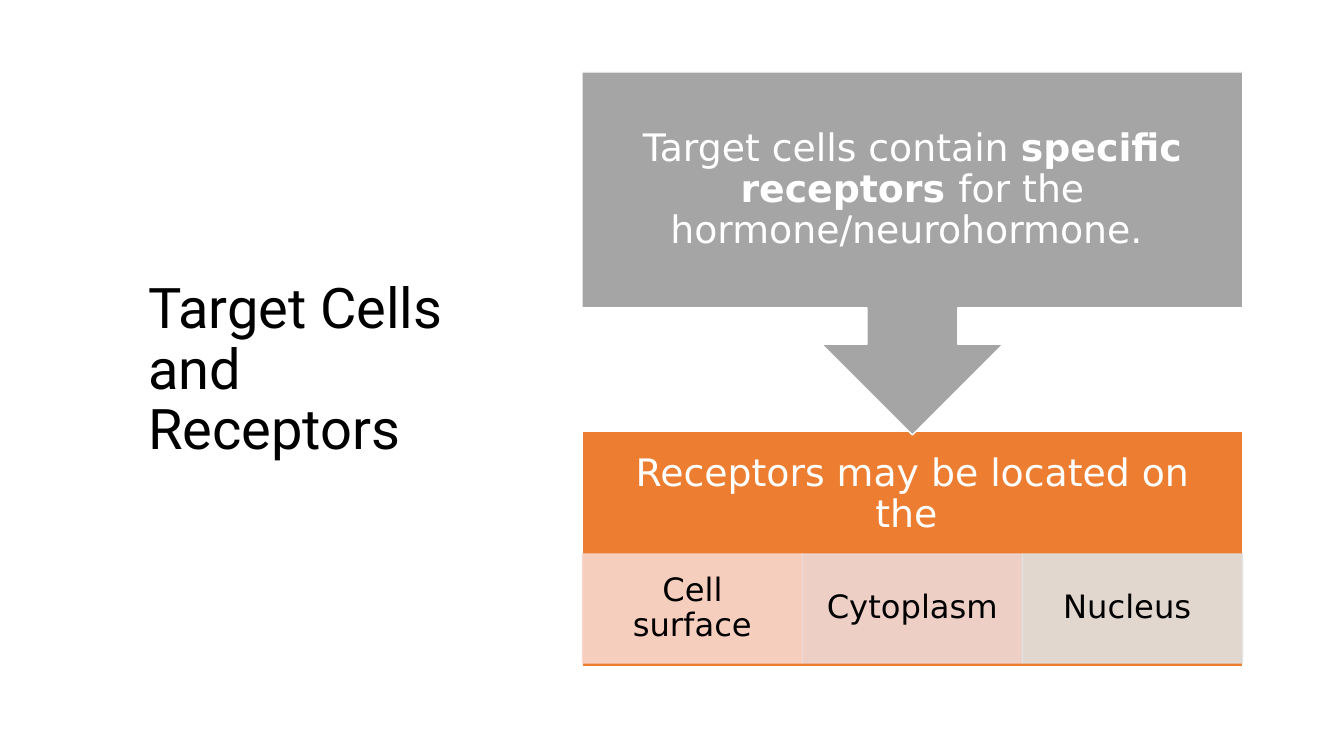
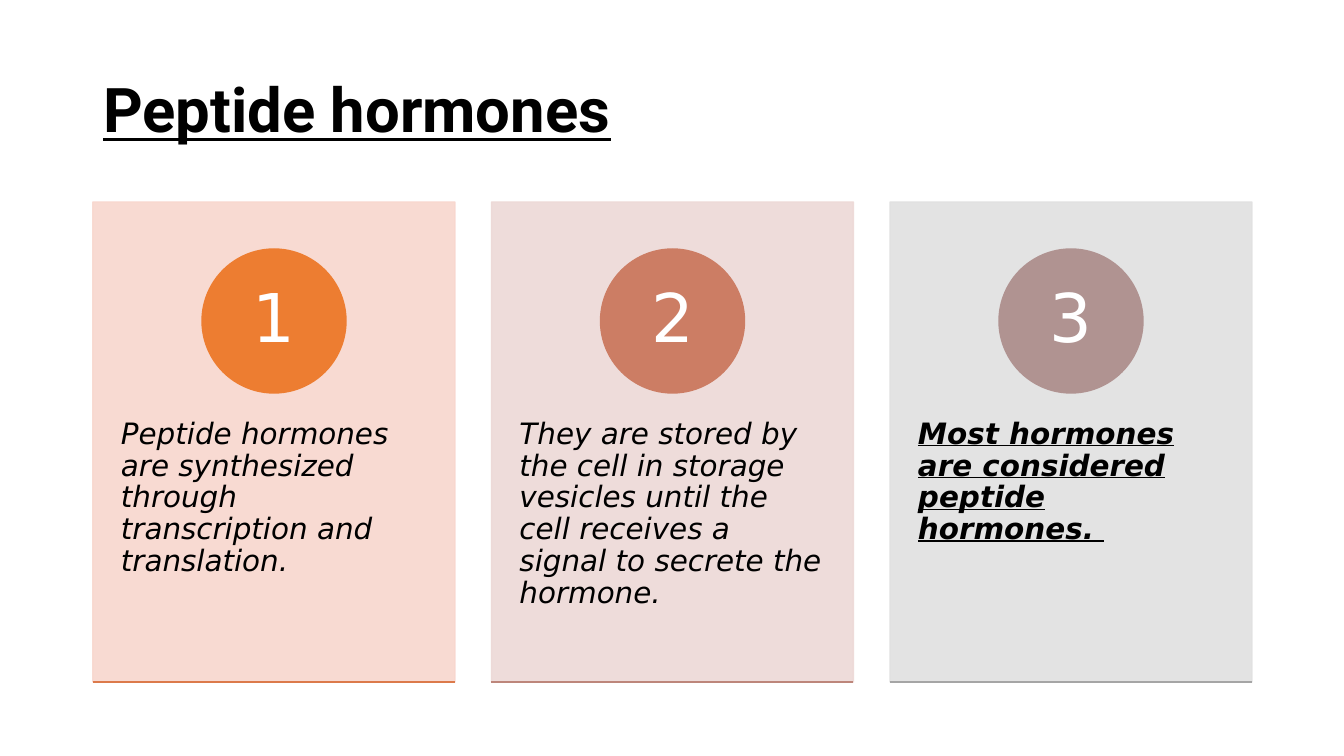
from lxml.etree import SubElement
from pptx import Presentation
from pptx.dml.color import RGBColor
from pptx.enum.shapes import MSO_CONNECTOR, MSO_SHAPE
from pptx.enum.text import MSO_ANCHOR, MSO_AUTO_SIZE, PP_ALIGN
from pptx.oxml.ns import qn
from pptx.util import Pt

# Content: runs are (text, style), where style holds b, i and u flags
RECEPTOR_TITLE = [("Target Cells and Receptors", "")]
CALLOUT_TEXT = [
    ("Target cells contain ", ""),
    ("specific receptors ", "b"),
    ("for the hormone/neurohormone. ", ""),
]
LOCATION_HEADING = [("Receptors may be located on the ", "")]
LOCATIONS = [("Cell surface", "peach"), ("Cytoplasm", "rose"), ("Nucleus ", "silver")]

PEPTIDE_TITLE = [("Peptide hormones", "bu")]
CARDS = [  # text, style, card, circle, bottom rule
    ("Peptide hormones are synthesized through transcription and translation.",
     "i", "peach", "orange", "burnt"),
    ("They are stored by the cell in storage vesicles until the cell receives "
     "a signal to secrete the hormone.",
     "i", "rose", "terracotta", "clay"),
    ("Most hormones are considered peptide hormones. ",
     "biu", "silver", "mauve", "gray"),
]

# Shared look
COLORS = {
    "black": "000000", "white": "FFFFFF", "gray": "A5A5A5", "orange": "ED7D31",
    "peach": "F8D7CE", "rose": "EDD9D7", "silver": "E1E1E1", "burnt": "DC7A4B",
    "terracotta": "CC7D64", "clay": "BD867B", "mauve": "B09391",
}
TITLE_FONT, BODY_FONT = "Roboto", "DejaVu Sans"
SLIDE_WIDTH, SLIDE_HEIGHT = 1344, 756
SCALE = 12192000 / SLIDE_WIDTH
TINT_OPACITY = 90


def px(length):
    return round(length * SCALE)


def color(name):
    return RGBColor.from_string(COLORS[name])


def write(shape, runs, font, size, ink, align, anchor=MSO_ANCHOR.MIDDLE, insets=None):
    frame = shape.text_frame
    frame.word_wrap = True
    frame.auto_size = MSO_AUTO_SIZE.NONE
    frame.vertical_anchor = anchor
    if insets:
        (frame.margin_left, frame.margin_top,
         frame.margin_right, frame.margin_bottom) = map(px, insets)
    para = frame.paragraphs[0]
    para.alignment = align
    para.line_spacing = 0.9
    for text, style in runs:
        span = para.add_run()
        span.text = text
        span.font.name = font
        span.font.size = Pt(size)
        span.font.color.rgb = color(ink)
        span.font.bold = "b" in style
        span.font.italic = "i" in style
        span.font.underline = "u" in style


def add_page(deck, title, box, size):
    page = deck.slides.add_slide(deck.slide_layouts[5])
    heading = page.shapes.title
    heading.left, heading.top, heading.width, heading.height = map(px, box)
    write(heading, title, TITLE_FONT, size, "black", PP_ALIGN.LEFT)
    return page


def add_block(page, kind, box, fill, line, opacity=100):
    shape = page.shapes.add_shape(kind, *map(px, box))
    shape.shadow.inherit = False
    shape.fill.solid()
    shape.fill.fore_color.rgb = color(fill)
    shape.line.color.rgb = color(line)
    shape.line.width = Pt(1)
    if opacity < 100:
        for tone in shape.element.spPr.iter(qn("a:srgbClr")):
            SubElement(tone, qn("a:alpha"), val=str(opacity * 1000))
    return shape


def add_rule(page, left, top, width, ink):
    rule = page.shapes.add_connector(
        MSO_CONNECTOR.STRAIGHT, px(left), px(top), px(left + width), px(top))
    rule.line.color.rgb = color(ink)
    rule.line.width = Pt(1)
    SubElement(rule.element.spPr, qn("a:effectLst"))


def build_receptors(deck):
    page = add_page(deck, RECEPTOR_TITLE, (138, 72, 373, 598), 40)
    left, width, pad = 582, 661, 21

    # Lower panel: heading above a row of locations
    panel_top, panel_height, heading_height = 431, 236, 128
    panel = add_block(page, MSO_SHAPE.RECTANGLE,
                      (left, panel_top, width, panel_height), "orange", "white")
    write(panel, LOCATION_HEADING, BODY_FONT, 27, "white", PP_ALIGN.CENTER,
          insets=(pad, pad, pad, pad + panel_height - heading_height))
    cell_width = (width - 1) / len(LOCATIONS)
    for index, (name, fill) in enumerate(LOCATIONS):
        cell = add_block(page, MSO_SHAPE.RECTANGLE,
                         (left + 0.5 + index * cell_width, 554, cell_width, 109),
                         fill, fill, TINT_OPACITY)
        write(cell, [(name, "")], BODY_FONT, 23, "black", PP_ALIGN.CENTER,
              insets=(18, 3, 18, 3))

    # Upper callout pointing at the panel
    callout = add_block(page, MSO_SHAPE.DOWN_ARROW_CALLOUT,
                        (left, 72, width, 363), "gray", "white")
    write(callout, CALLOUT_TEXT, BODY_FONT, 27, "white", PP_ALIGN.CENTER,
          insets=(pad, pad, pad, pad))


def build_peptides(deck):
    left, width = 93, 1159
    page = add_page(deck, PEPTIDE_TITLE, (left, 40, width, 146), 44)
    top, card_width, card_height, circle = 202, 362, 480, 144
    step = (width - card_width) / (len(CARDS) - 1)
    for index, (text, style, fill, accent, rule) in enumerate(CARDS):
        card_left = left + index * step
        card = add_block(page, MSO_SHAPE.RECTANGLE,
                         (card_left, top, card_width, card_height),
                         fill, fill, TINT_OPACITY)
        write(card, [(text, style)], BODY_FONT, 21, "black", PP_ALIGN.LEFT,
              MSO_ANCHOR.TOP, (28, 217, 28, 36))
        badge = add_block(page, MSO_SHAPE.OVAL,
                          (card_left + (card_width - circle) / 2, top + 47,
                           circle, circle), accent, accent)
        write(badge, [(str(index + 1), "")], BODY_FONT, 48, "white",
              PP_ALIGN.CENTER, insets=(11, 1, 11, 1))
        add_rule(page, card_left, top + card_height, card_width, rule)


def main():
    deck = Presentation()
    deck.slide_width, deck.slide_height = px(SLIDE_WIDTH), px(SLIDE_HEIGHT)
    build_receptors(deck)
    build_peptides(deck)
    deck.save("out.pptx")


if __name__ == "__main__":
    main()
